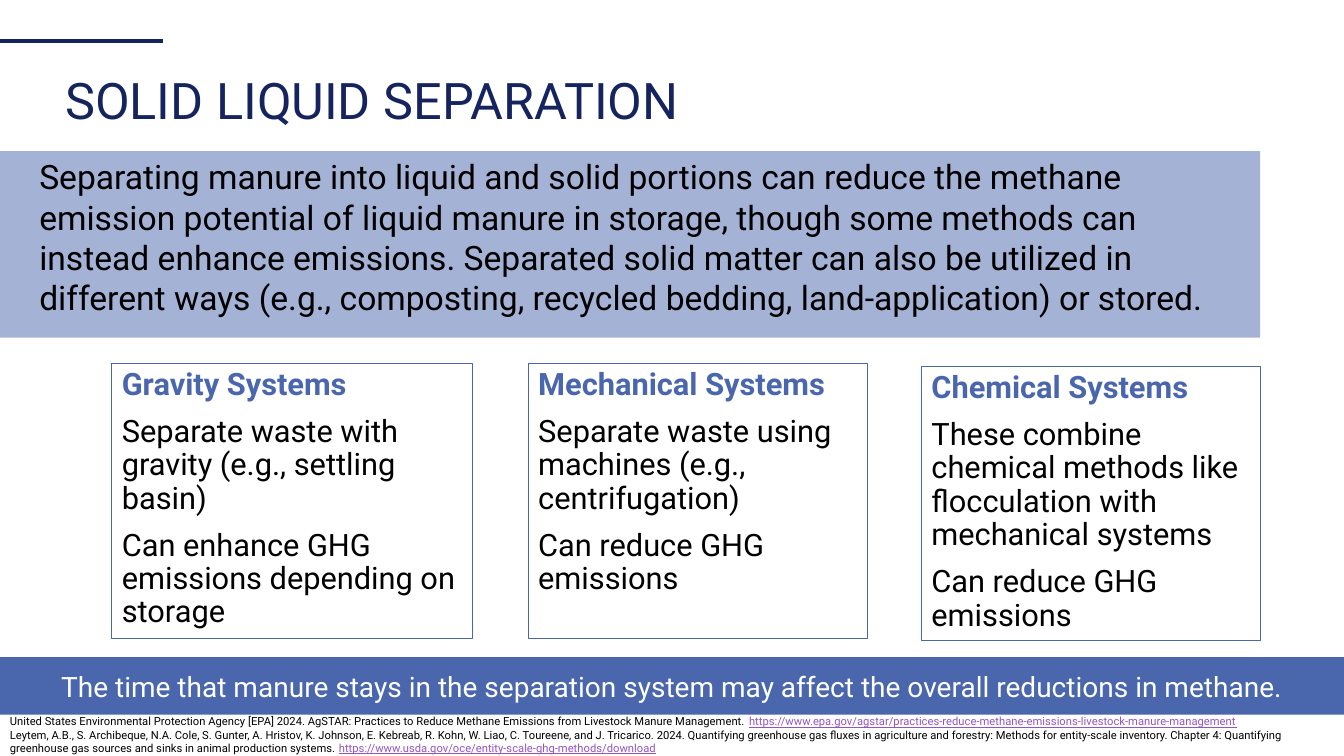
from lxml.etree import SubElement
from pptx import Presentation
from pptx.dml.color import RGBColor
from pptx.enum.shapes import MSO_CONNECTOR, MSO_SHAPE
from pptx.enum.text import MSO_ANCHOR, PP_ALIGN
from pptx.oxml.ns import qn
from pptx.util import Inches, Pt

NAVY = RGBColor(0x15, 0x23, 0x5F)
BLUE = RGBColor(0x4A, 0x66, 0xAC)
PURPLE = RGBColor(0x94, 0x54, 0xC3)
BLACK = RGBColor(0, 0, 0)
WHITE = RGBColor(0xFF, 0xFF, 0xFF)
FONT = "Roboto"

TITLE = "SOLID LIQUID SEPARATION"
INTRO = (
    "Separating manure into liquid and solid portions can reduce the methane "
    "emission potential of liquid manure in storage, though some methods can "
    "instead enhance emissions. Separated solid matter can also be utilized in "
    "different ways (e.g., composting, recycled bedding, land-application) or stored."
)
SYSTEMS = [
    ((1.11, 3.61, 3.58, 2.72), "Gravity Systems",
     ["Separate waste with gravity (e.g., settling basin)",
      "Can enhance GHG emissions depending on storage"]),
    ((5.24, 3.61, 3.36, 2.72), "Mechanical Systems",
     ["Separate waste using machines (e.g., centrifugation)",
      "Can reduce GHG emissions"]),
    ((9.14, 3.64, 3.36, 2.71), "Chemical Systems",
     ["These combine chemical methods like flocculation with mechanical systems",
      "Can reduce GHG emissions"]),
]
TAKEAWAY = ("The time that manure stays in the separation system may affect "
            "the overall reductions in methane.")
REFERENCES = [
    ("United States Environmental Protection Agency [EPA] 2024. AgSTAR: Practices to "
     "Reduce Methane Emissions from Livestock Manure Management. ",
     "https://www.epa.gov/agstar/practices-reduce-methane-emissions-livestock-manure-management"),
    ("Leytem, A.B., S. Archibeque, N.A. Cole, S. Gunter, A. Hristov, K. Johnson, "
     "E. Kebreab, R. Kohn, W. Liao, C. Toureene, and J. Tricarico. 2024. Quantifying "
     "greenhouse gas fluxes in agriculture and forestry: Methods for entity-scale "
     "inventory. Chapter 4: Quantifying greenhouse gas sources and sinks in animal "
     "production systems. ",
     "https://www.usda.gov/oce/entity-scale-ghg-methods/download"),
]


def set_all(target, values):
    for name, value in values.items():
        setattr(target, name, value)


def add_text(sp, paragraphs, size, anchor=MSO_ANCHOR.TOP, **layout):
    tf = sp.text_frame
    set_all(tf, {"word_wrap": True, "vertical_anchor": anchor})
    for i, runs in enumerate(paragraphs):
        p = tf.add_paragraph() if i else tf.paragraphs[0]
        set_all(p, {"alignment": PP_ALIGN.LEFT, **layout})
        if i == 0:
            p.space_before = Pt(0)
        for text, color, style in runs:
            r = p.add_run()
            r.text = text
            set_all(r.font, {"name": FONT, "size": Pt(size), **style})
            r.font.color.rgb = color
    return tf


def add_box(s, box, fill=None, line=None):
    sp = s.shapes.add_shape(MSO_SHAPE.RECTANGLE, *map(Inches, box))
    sp.shadow.inherit = False
    if fill is None:
        sp.fill.background()
    else:
        sp.fill.solid()
        sp.fill.fore_color.rgb = fill
    if line is None:
        sp.line.fill.background()
    else:
        sp.line.color.rgb = line
        sp.line.width = Pt(0.75)
    return sp


def add_textbox(s, box):
    return s.shapes.add_textbox(*map(Inches, box))


prs = Presentation()
set_all(prs, {"slide_width": Inches(13.33), "slide_height": Inches(7.5)})
s = prs.slides.add_slide(prs.slide_layouts[6])

accent = s.shapes.add_connector(
    MSO_CONNECTOR.STRAIGHT, Inches(0), Inches(0.41), Inches(1.62), Inches(0.41))
accent.line.color.rgb = NAVY
accent.line.width = Pt(3)
SubElement(accent.line._get_or_add_ln().getparent(), qn("a:effectLst"))

intro = add_box(s, (0, 1.5, 12.5, 1.85), fill=BLUE)
color = intro.fill._xPr.find(qn("a:solidFill")).find(qn("a:srgbClr"))
SubElement(color, qn("a:alpha")).set("val", "50000")
tf = add_text(intro, [[(INTRO, BLACK, {})]], 24)
tf.margin_left = Inches(0.39)

for box, heading, points in SYSTEMS:
    paragraphs = [[(heading, BLUE, {"bold": True})]]
    paragraphs += [[(point, BLACK, {})] for point in points]
    add_text(add_box(s, box, line=BLUE), paragraphs, 22,
             line_spacing=0.9, space_before=Pt(10))

add_text(add_box(s, (0, 6.52, 13.33, 0.57), fill=BLUE),
         [[(TAKEAWAY, WHITE, {})]], 20, MSO_ANCHOR.MIDDLE, alignment=PP_ALIGN.CENTER)

add_text(add_textbox(s, (0.55, 0.69, 12.23, 0.66)),
         [[(TITLE, NAVY, {})]], 36, MSO_ANCHOR.MIDDLE, line_spacing=0.9)

add_text(add_textbox(s, (0, 7.04, 13.33, 0.5)),
         [[(citation, BLACK, {}), (url, PURPLE, {"underline": True})]
          for citation, url in REFERENCES], 8)

prs.save("out.pptx")
